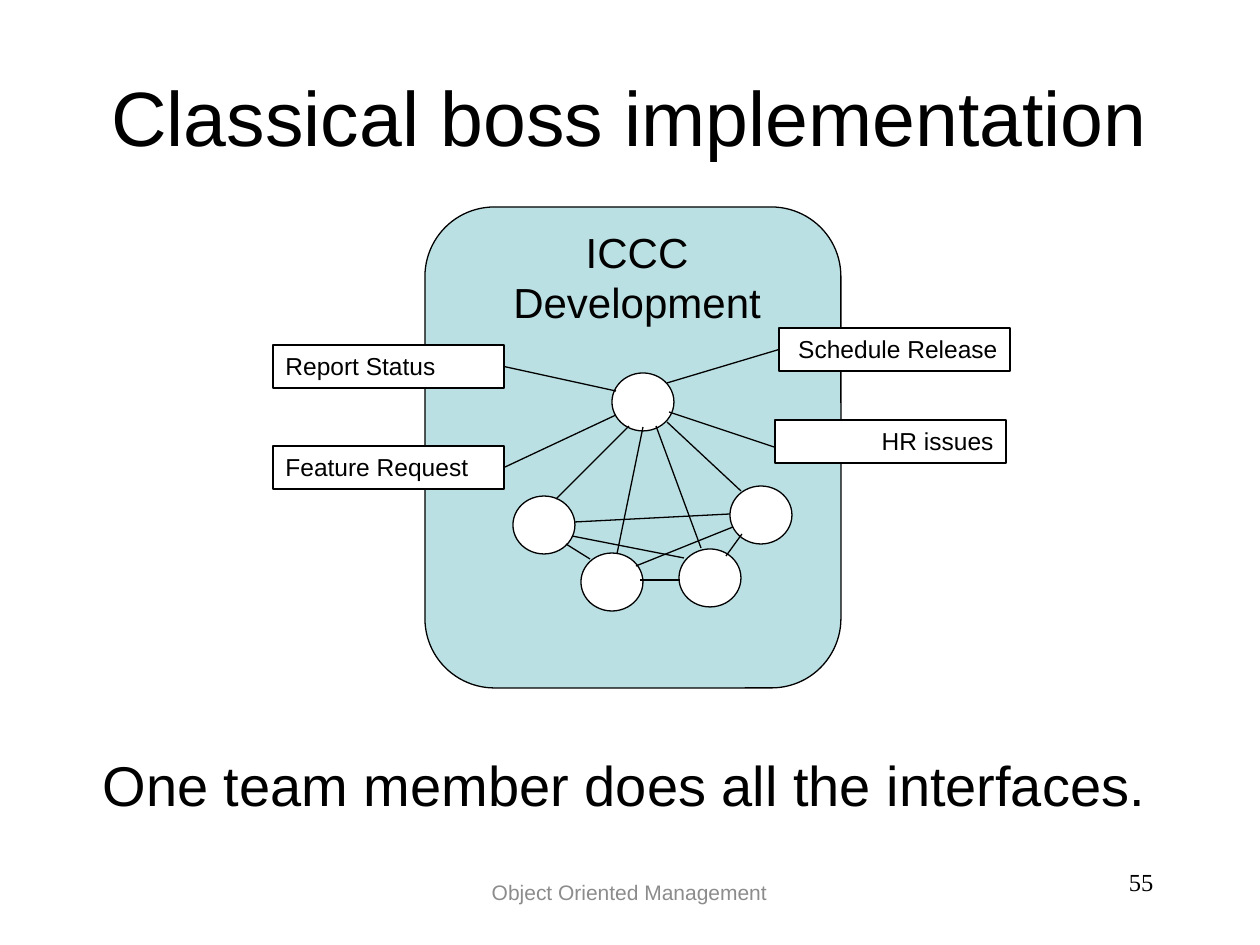
from dataclasses import dataclass

from lxml import etree
from pptx import Presentation
from pptx import util as u
from pptx.dml.color import RGBColor
from pptx.enum import shapes, text
from pptx.oxml import ns


@dataclass(frozen=True)
class Theme:
    """Colours, fonts and type sizes of the slide."""
    ink: str = "000000"
    paper: str = "FFFFFF"
    team: str = "BBE0E3"
    muted: str = "8C8C8C"
    sans: str = "Arial"
    serif: str = "Times New Roman"
    title: int = 44
    body: int = 32
    heading: int = 24
    label: int = 14
    footer: int = 12
    thin: float = 0.75
    thick: float = 1.5


THEME = Theme()
ALIGN = text.PP_ALIGN
ANCHOR = text.MSO_ANCHOR
SHAPE = shapes.MSO_SHAPE
LEFT_SIDE, RIGHT_SIDE = 1, 3

INTERFACE_SIZE = (231, 43)
MEMBER_SIZE = (62, 58)
INTERFACES = [
    ("Report Status", (-152, 138), RIGHT_SIDE, (191, 184)),
    ("Feature Request", (-152, 239), RIGHT_SIDE, (191, 208)),
    ("Schedule Release", (354, 121), LEFT_SIDE, (242, 176)),
    ("HR issues", (350, 213), None, (244, 205)),
]
HR_LINE_START = (349, 240)
BOSS = (187, 166)
MEMBERS = [(88, 289), (254, 342), (305, 279), (156, 346)]
BOSS_LINKS = [
    ((204, 219), (131, 292)), ((218, 220), (192, 347)),
    ((231, 219), (276, 341)), ((242, 215), (316, 284)),
]
PEER_LINKS = [
    ((141, 337), (165, 352)), ((215, 373), (255, 373)),
    ((301, 349), (317, 327)), ((150, 315), (305, 307)),
    ((147, 329), (259, 351)), ((308, 320), (211, 359)),
]


def px(length):
    """Turn whole pixels into EMU."""
    return u.Emu(round(length * 914400 / 126))


def place(shape, box):
    """Move and size a shape to a box in pixels."""
    shape.left, shape.top, shape.width, shape.height = map(px, box)


def write(shape, words, size, color=THEME.ink, font=THEME.sans,
          align=ALIGN.LEFT, anchor=ANCHOR.TOP):
    """Fill a shape with one formatted paragraph and return it."""
    frame = shape.text_frame
    frame.word_wrap = True
    frame.auto_size = text.MSO_AUTO_SIZE.NONE
    frame.vertical_anchor = anchor
    para = frame.paragraphs[0]
    para.alignment = align
    para.space_before = u.Pt(0)
    span = para.add_run()
    span.text = words
    span.font.name = font
    span.font.size = u.Pt(size)
    span.font.color.rgb = RGBColor.from_string(color)
    return para


def add_label(page, box, words, size, **style):
    """Add a text box."""
    label = page.shapes.add_textbox(*map(px, box))
    write(label, words, size, **style)


def add_figure(page, kind, box, fill=THEME.paper, weight=THEME.thin):
    """Add a filled and outlined preset shape."""
    figure = page.shapes.add_shape(kind, *map(px, box))
    figure.shadow.inherit = False
    figure.fill.solid()
    figure.fill.fore_color.rgb = RGBColor.from_string(fill)
    figure.line.color.rgb = RGBColor.from_string(THEME.ink)
    figure.line.width = u.Pt(weight)
    return figure


def add_link(page, start, end):
    """Add a thin straight line between two points."""
    link = page.shapes.add_connector(
        shapes.MSO_CONNECTOR.STRAIGHT, *map(px, (*start, *end)))
    link.line.color.rgb = RGBColor.from_string(THEME.ink)
    link.line.width = u.Pt(THEME.thin)
    etree.SubElement(link._element.spPr, ns.qn("a:effectLst"))
    return link


def draw_title(page, box):
    """Place the slide title."""
    title = page.shapes.title
    place(title, box)
    write(title, "Classical boss implementation", THEME.title,
          align=ALIGN.CENTER, anchor=ANCHOR.MIDDLE)


def draw_body(page, box):
    """Place the closing statement with a hanging indent and no bullet."""
    body = page.placeholders[1]
    place(body, box)
    body.text_frame.margin_top = px(14)
    para = write(body, "One team member does all the interfaces.", THEME.body)
    properties = para._p.get_or_add_pPr()
    properties.set("marL", str(px(48)))
    properties.set("indent", str(px(-47)))
    etree.SubElement(properties, ns.qn("a:buNone"))


def draw_team(page, box):
    """Draw the team, its interfaces and the links through the boss."""
    left, top, width, height = box

    def at(point):
        """Shift a point of the team onto the page."""
        return left + point[0], top + point[1]

    panel = add_figure(page, SHAPE.ROUNDED_RECTANGLE, box, THEME.team)
    panel.adjustments[0] = 0.167
    add_label(page, (*at((20, 13)), 384, 113), "ICCC Development",
              THEME.heading, align=ALIGN.CENTER)

    cards = []
    for words, corner, side, end in INTERFACES:
        card = add_figure(page, SHAPE.RECTANGLE,
                          (*at(corner), *INTERFACE_SIZE), weight=THEME.thick)
        align = ALIGN.LEFT if corner[0] < 0 else ALIGN.RIGHT
        write(card, words, THEME.label, align=align)
        cards.append((card, side, end))

    add_figure(page, SHAPE.OVAL, (*at(BOSS), *MEMBER_SIZE))
    for card, side, end in cards:
        link = add_link(page, at(HR_LINE_START), at(end))
        if side is not None:
            link.begin_connect(card, side)

    for corner in MEMBERS:
        add_figure(page, SHAPE.OVAL, (*at(corner), *MEMBER_SIZE))
    for start, end in BOSS_LINKS + PEER_LINKS:
        add_link(page, at(start), at(end))


def draw_footer(page, box):
    """Place the course name and the page number."""
    left, top, width, height = box
    add_label(page, (left, top, 515, height), "Object Oriented Management",
              THEME.footer, color=THEME.muted, align=ALIGN.CENTER,
              anchor=ANCHOR.MIDDLE)
    add_label(page, (left + width - 262, top, 262, height), "55", THEME.label,
              font=THEME.serif, align=ALIGN.RIGHT)


def main():
    """Build the slide and save the deck."""
    deck = Presentation()
    deck.slide_width, deck.slide_height = px(1260), px(945)
    page = deck.slides.add_slide(deck.slide_layouts[1])
    draw_title(page, (94, 63, 1071, 105))
    draw_body(page, (89, 737, 1071, 102))
    draw_team(page, (425, 207, 416, 481))
    draw_footer(page, (372, 861, 794, 62))
    deck.save("out.pptx")


if __name__ == "__main__":
    main()
